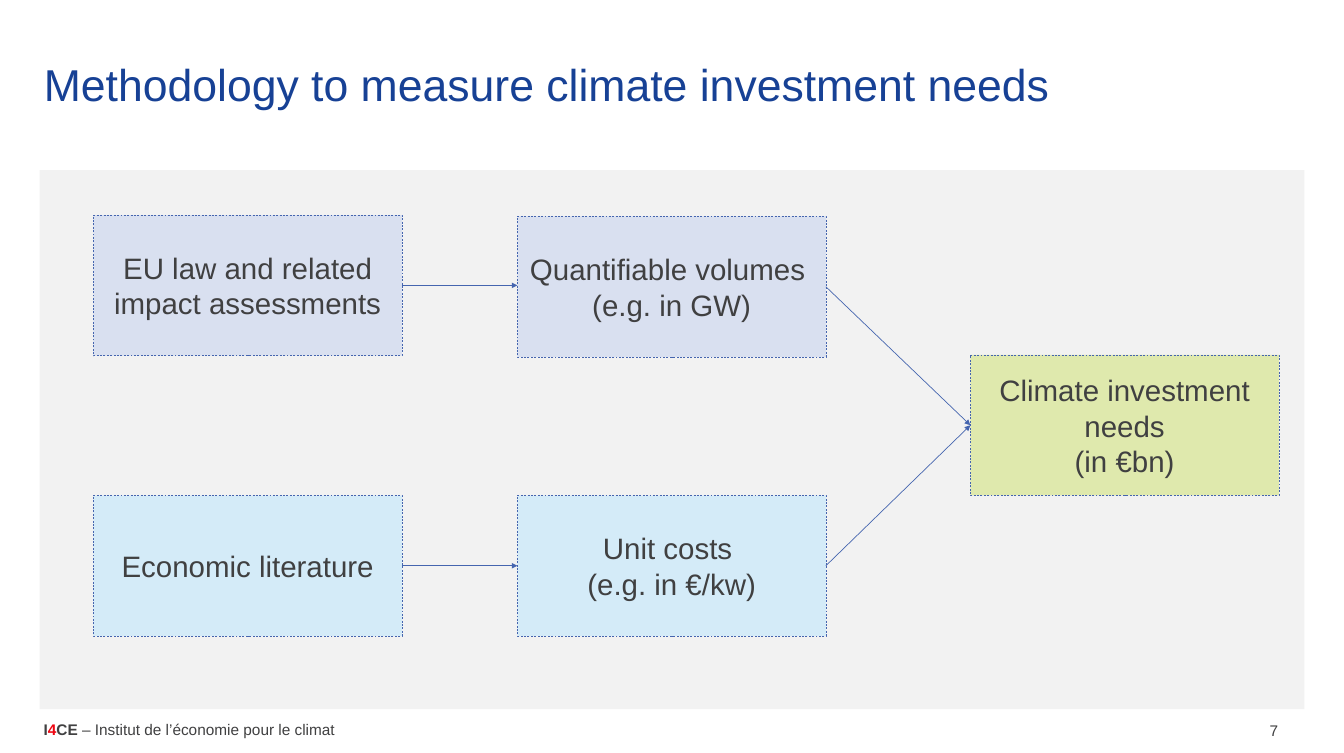
"""Build the slide on the method used to measure climate investment needs."""
from lxml.etree import SubElement
from pptx import Presentation
from pptx.dml.color import RGBColor
from pptx.enum.dml import MSO_LINE
from pptx.enum.shapes import MSO_CONNECTOR, MSO_SHAPE
from pptx.enum.text import MSO_ANCHOR, MSO_AUTO_SIZE, PP_ALIGN
from pptx.oxml.ns import qn
from pptx.util import Pt

PX = 9000
COLORS = {
    "title": "174195", "text": "404041", "accent": "EE0612", "line": "4565AF",
    "panel": "F2F2F2", "volume": "D9E0F0", "cost": "D4EBF8", "result": "DFE9AD",
}


def rgb(name):
    return RGBColor.from_string(COLORS[name])


def style(font, size, color="text", bold=False):
    font.name, font.size, font.bold = "Arial", Pt(size), bold
    font.color.rgb = rgb(color)


prs = Presentation()
prs.slide_width, prs.slide_height = 2000 * PX, 1120 * PX
s = prs.slides.add_slide(prs.slide_layouts[5])

title = s.shapes.title
title.left, title.top, title.width, title.height = 55 * PX, 66 * PX, 1890 * PX, 118 * PX
tf = title.text_frame
tf.text = "Methodology to measure climate investment needs"
tf.auto_size = MSO_AUTO_SIZE.NONE
tf.vertical_anchor = MSO_ANCHOR.MIDDLE
p = tf.paragraphs[0]
p.alignment = PP_ALIGN.LEFT
style(p.runs[0].font, 47, "title")

panel = s.shapes.add_shape(MSO_SHAPE.RECTANGLE, 59 * PX, 253 * PX, 1882 * PX, 802 * PX)
panel.shadow.inherit = False
panel.fill.solid()
panel.fill.fore_color.rgb = rgb("panel")
panel.line.fill.background()

BOX_W, BOX_H = 459, 209
BOXES = {
    "law": (139, 320, "volume", "EU law and related impact assessments"),
    "volumes": (770, 322, "volume", "Quantifiable volumes \n(e.g. in GW)"),
    "literature": (139, 737, "cost", "Economic literature"),
    "costs": (770, 737, "cost", "Unit costs \n(e.g. in €/kw)"),
    "needs": (1444, 528, "result", "Climate investment needs\n(in €bn)"),
}
boxes = {}
for name, (x, y, fill, text) in BOXES.items():
    sp = s.shapes.add_shape(MSO_SHAPE.RECTANGLE, x * PX, y * PX, BOX_W * PX, BOX_H * PX)
    sp.shadow.inherit = False
    sp.fill.solid()
    sp.fill.fore_color.rgb = rgb(fill)
    sp.line.color.rgb = rgb("line")
    sp.line.width = Pt(0.5)
    sp.line.dash_style = MSO_LINE.DASH
    tf = sp.text_frame
    tf.text = text
    tf.word_wrap = True
    tf.vertical_anchor = MSO_ANCHOR.MIDDLE
    for p in tf.paragraphs:
        p.alignment = PP_ALIGN.CENTER
        style(p.runs[0].font, 31.1)
    boxes[name] = sp

LEFT_SITE, RIGHT_SITE = 1, 3
for start, end in [("law", "volumes"), ("volumes", "needs"),
                   ("costs", "needs"), ("literature", "costs")]:
    arrow = s.shapes.add_connector(MSO_CONNECTOR.STRAIGHT, 0, 0, 0, 0)
    arrow.begin_connect(boxes[start], RIGHT_SITE)
    if end == "needs":
        arrow.end_connect(boxes[end], LEFT_SITE)
    else:
        arrow.end_x, arrow.end_y = boxes[end].left, arrow.begin_y
    arrow.line.color.rgb = rgb("line")
    arrow.line.width = Pt(0.75)
    SubElement(arrow.line._get_or_add_ln(), qn("a:tailEnd"), type="triangle")
    SubElement(arrow._element.spPr, qn("a:effectLst"))

FOOTERS = [
    (55, 1066, 678, PP_ALIGN.LEFT, [
        ("I", "text", True), ("4", "accent", True), ("CE ", "text", True),
        ("– Institut de l’économie pour le climat", "text", False)]),
    (1756, 1068, 156, PP_ALIGN.RIGHT, [("7", "text", False)]),
]
for x, y, width, align, parts in FOOTERS:
    tf = s.shapes.add_textbox(x * PX, y * PX, width * PX, 38 * PX).text_frame
    tf.word_wrap = True
    p = tf.paragraphs[0]
    p.alignment = align
    for text, color, bold in parts:
        r = p.add_run()
        r.text = text
        style(r.font, 16.2, color, bold)

prs.save("out.pptx")
